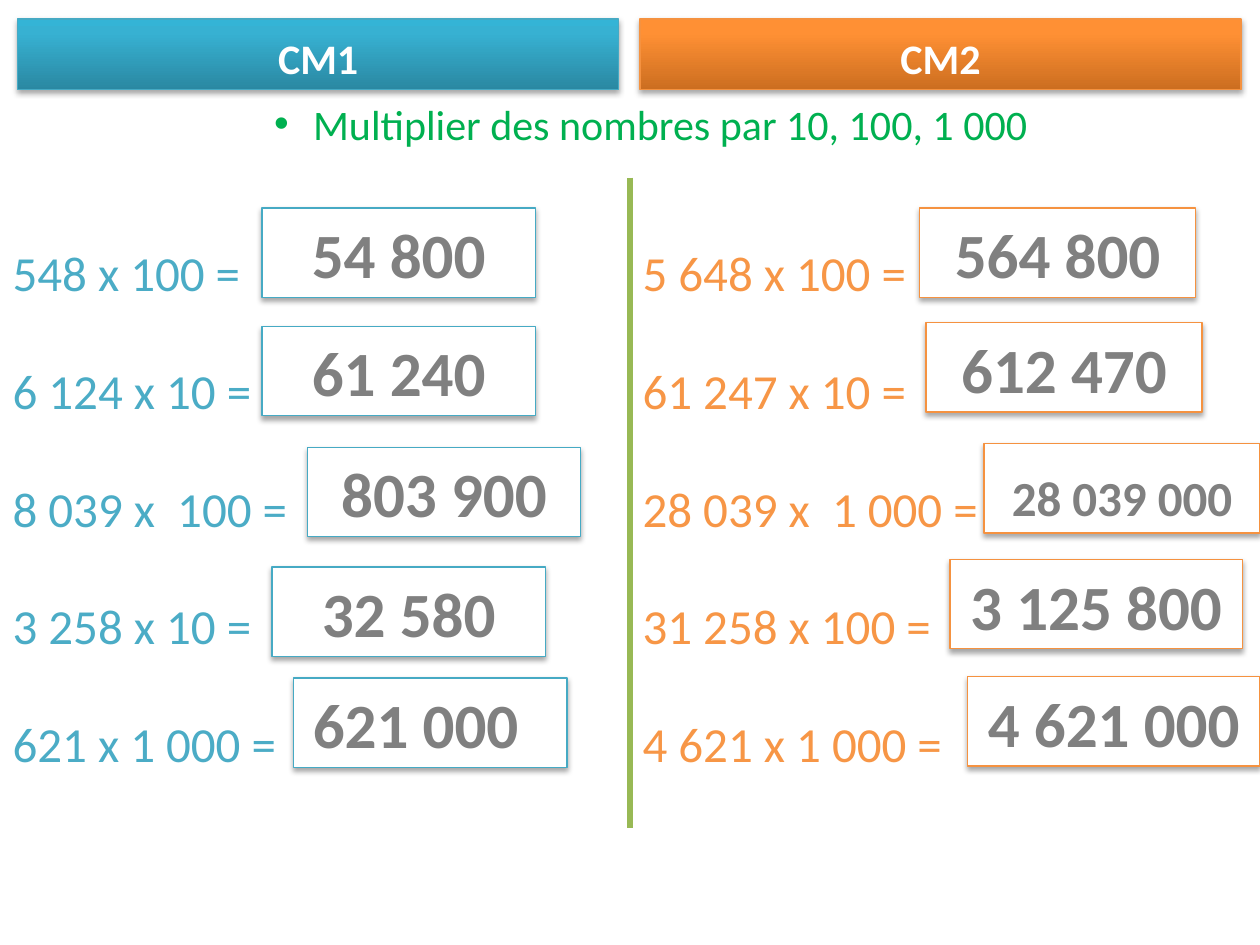
import copy

import pptx
import pptx.dml.color
import pptx.enum.shapes
import pptx.enum.text
import pptx.oxml
import pptx.oxml.ns
import pptx.util
from lxml import etree

RGBColor = pptx.dml.color.RGBColor
PP_ALIGN = pptx.enum.text.PP_ALIGN
ANCHOR = pptx.enum.text.MSO_ANCHOR

WHITE = RGBColor(0xFF, 0xFF, 0xFF)
GREEN = RGBColor(0x00, 0xB0, 0x50)
DIVIDER_GREEN = RGBColor(0x98, 0xB9, 0x55)
ANSWER_GREY = RGBColor(0x80, 0x80, 0x80)
BLUE = RGBColor(0x4B, 0xAC, 0xC6)
BLUE_LINE = RGBColor(0x46, 0xAA, 0xC4)
BLUE_GRADIENT = [RGBColor(0x2A, 0x88, 0xA2), RGBColor(0x37, 0xB1, 0xD2), RGBColor(0x34, 0xB4, 0xD6)]
ORANGE = RGBColor(0xF7, 0x96, 0x46)
ORANGE_LINE = RGBColor(0xF5, 0x92, 0x40)
ORANGE_GRADIENT = [RGBColor(0xCC, 0x6E, 0x20), RGBColor(0xFF, 0x90, 0x34), RGBColor(0xFF, 0x91, 0x36)]

NAMESPACE = pptx.oxml.ns.nsdecls("a")
SHADOW = (
    f'<a:effectLst {NAMESPACE}><a:outerShdw blurRad="40000" dist="23000" dir="5400000" rotWithShape="0">'
    '<a:srgbClr val="000000"><a:alpha val="35000"/></a:srgbClr></a:outerShdw></a:effectLst>'
)

presentation = pptx.Presentation()
presentation.slide_width = pptx.util.Inches(10)
presentation.slide_height = pptx.util.Inches(7.5)
COLUMN = presentation.slide_width / 100
ROW = presentation.slide_height / 75

slide = presentation.slides.add_slide(presentation.slide_layouts.get_by_name("Comparison"))
title, *columns = slide.placeholders
headers, lists = columns[0::2], columns[1::2]


def place(shape, left, top, width, height, anchor):
    """Position a shape in grid columns and rows, and set up its text frame."""
    shape.left, shape.top = round(left * COLUMN), round(top * ROW)
    shape.width, shape.height = round(width * COLUMN), round(height * ROW)
    frame = shape.text_frame
    frame.word_wrap = True
    frame.auto_size = pptx.enum.text.MSO_AUTO_SIZE.NONE
    frame.vertical_anchor = anchor


def write(paragraph, text, size, color, bold=False, alignment=PP_ALIGN.CENTER, before=0):
    paragraph.alignment = alignment
    paragraph.space_before = pptx.util.Pt(before)
    run = paragraph.add_run()
    run.text = text
    run.font.name = "Calibri"
    run.font.size = pptx.util.Pt(size)
    run.font.bold = bold
    run.font.color.rgb = color


# Lesson title with a bullet
place(title, 8.4, 7.3, 86.5, 5, ANCHOR.TOP)
paragraph = title.text_frame.paragraphs[0]
write(paragraph, "Multiplier des nombres par 10, 100, 1 000", 24, GREEN)
properties = paragraph._p.get_or_add_pPr()
properties.set("marL", str(pptx.util.Inches(0.31)))
properties.set("indent", str(pptx.util.Inches(-0.31)))
for bullet_part in (
    f'<a:buClr {NAMESPACE}><a:srgbClr val="{GREEN}"/></a:buClr>',
    f'<a:buFont {NAMESPACE} typeface="Arial"/>',
    f'<a:buChar {NAMESPACE} char="•"/>',
):
    properties.append(pptx.oxml.parse_xml(bullet_part))

# Each level: heading, header left, list left and width, colours,
# exercises as (calculation, answer, answer left, top, width, text size)
levels = [
    ("CM1", 1.4, 0, 44.2, BLUE, BLUE_LINE, BLUE_GRADIENT, [
        ("548 x 100 =", "54 800", 20.8, 16.5, 21.7, 36),
        ("6 124 x 10 =", "61 240", 20.8, 25.9, 21.7, 36),
        ("8 039 x  100 =", "803 900", 24.4, 35.5, 21.7, 36),
        ("3 258 x 10 =", "32 580", 21.6, 45, 21.7, 36),
        ("621 x 1 000 =", "621 000", 23.3, 53.8, 21.7, 36),
    ]),
    ("CM2", 50.8, 50, 29.2, ORANGE, ORANGE_LINE, ORANGE_GRADIENT, [
        ("5 648 x 100 =", "564 800", 73, 16.5, 21.9, 36),
        ("61 247 x 10 =", "612 470", 73.5, 25.6, 21.9, 36),
        ("28 039 x  1 000 =", "28 039 000", 78.1, 35.2, 21.9, 28),
        ("31 258 x 100 =", "3 125 800", 75.4, 44.4, 23.2, 36),
        ("4 621 x 1 000 =", "4 621 000", 76.8, 53.7, 23.2, 36),
    ]),
]

for header, exercise_list, level in zip(headers, lists, levels):
    heading, header_left, list_left, list_width, color, line_color, gradient, exercises = level

    place(header, header_left, 1.5, 47.7, 5.6, ANCHOR.BOTTOM)
    write(header.text_frame.paragraphs[0], heading, 24, WHITE, bold=True, before=4.8)
    header.fill.gradient()
    header.fill.gradient_angle = 90
    stop_list = header._element.spPr.find(".//" + pptx.oxml.ns.qn("a:gsLst"))
    stop_list.append(copy.deepcopy(stop_list[0]))
    for stop, position, stop_color in zip(header.fill.gradient_stops, (0, 0.8, 1), gradient):
        stop.position = position
        stop.color.rgb = stop_color
    header.line.color.rgb = line_color
    header.line.width = pptx.util.Pt(0.75)
    header._element.spPr.append(pptx.oxml.parse_xml(SHADOW))

    place(exercise_list, list_left, 14.1, list_width, 46.8, ANCHOR.TOP)
    for index, (calculation, answer, left, top, width, size) in enumerate(exercises):
        frame = exercise_list.text_frame
        paragraph = frame.add_paragraph() if index else frame.paragraphs[0]
        write(paragraph, calculation, 28, color, alignment=PP_ALIGN.LEFT)
        paragraph.line_spacing = 2.0
        properties = paragraph._p.get_or_add_pPr()
        properties.set("marL", "0")
        properties.set("indent", "0")
        etree.SubElement(properties, pptx.oxml.ns.qn("a:buNone"))

        box = slide.shapes.add_shape(pptx.enum.shapes.MSO_SHAPE.RECTANGLE, 0, 0, 0, 0)
        place(box, left, top, width, 7.1, ANCHOR.BOTTOM)
        box.fill.solid()
        box.fill.fore_color.rgb = WHITE
        box.line.color.rgb = line_color
        box.line.width = pptx.util.Pt(0.75)
        box._element.spPr.append(pptx.oxml.parse_xml(SHADOW))
        write(box.text_frame.paragraphs[0], answer, size, ANSWER_GREY, bold=True, before=4.8)
        if answer == "621 000":
            box.text_frame.margin_right = pptx.util.Inches(0.33)

# Divider between the two levels
divider = slide.shapes.add_connector(
    pptx.enum.shapes.MSO_CONNECTOR.STRAIGHT,
    round(50 * COLUMN), round(14.1 * ROW), round(50 * COLUMN), round(65.7 * ROW),
)
divider.line.color.rgb = DIVIDER_GREEN
divider.line.width = pptx.util.Pt(3)
etree.SubElement(divider._element.spPr, pptx.oxml.ns.qn("a:effectLst"))

presentation.save("out.pptx")
